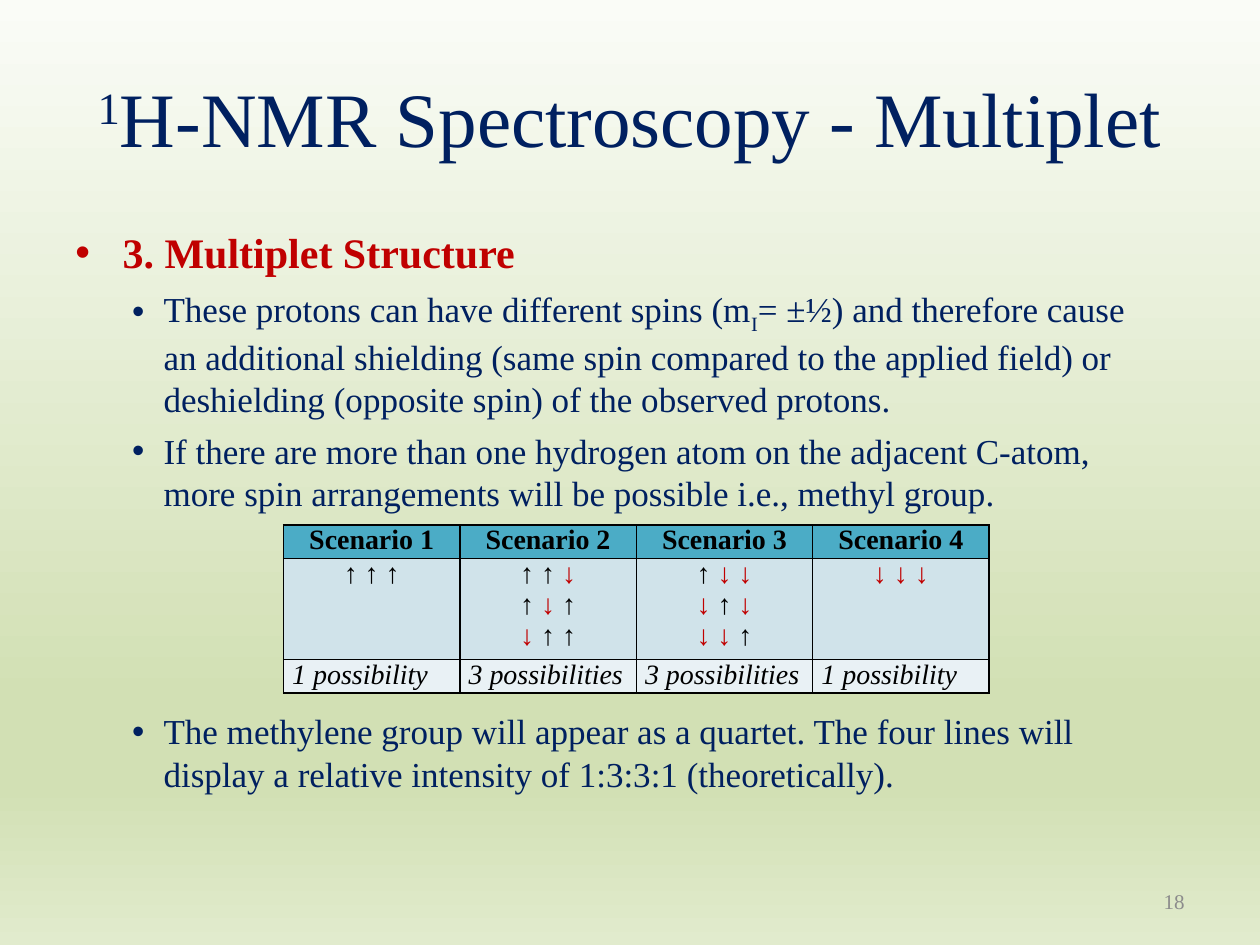
from lxml import etree
from pptx import Presentation
from pptx.dml.color import RGBColor
from pptx.enum.text import MSO_ANCHOR, PP_ALIGN
from pptx.oxml.ns import qn
from pptx.util import Pt

CENTER, RIGHT, LEFT = PP_ALIGN.CENTER, PP_ALIGN.RIGHT, PP_ALIGN.LEFT
TOP, MIDDLE = MSO_ANCHOR.TOP, MSO_ANCHOR.MIDDLE
FONT = "Times New Roman"
NAVY, RED, BLACK, GRAY = "002060", "C00000", "000000", "8C8C8C"
HEADER_FILL, SPIN_FILL, COUNT_FILL = "4BACC6", "D0E3EA", "E9F1F5"
BACKGROUND = [(0, "FAFCF7"), (74, "D2E0B4"), (83, "D2E0B4"), (100, "E1EBCD")]
TABLE_GAP = 112  # space kept free for the table above the last bullet

BULLETS = [
    (6, [("These protons can have different spins (m", 0), ("I", -25),
         ("= ±½) and therefore cause \nan additional shielding (same spin compared "
          "to the applied field) or deshielding (opposite spin) of the observed protons.", 0)]),
    (6, [("If there are more than one hydrogen atom on the adjacent C-atom, \n"
          "more spin arrangements will be possible i.e., methyl group.", 0)]),
    (TABLE_GAP, [("The methylene group will appear as a quartet. The four lines will \n"
                  "display a relative intensity of 1:3:3:1 (theoretically).", 0)]),
]
SCENARIOS = [
    ("Scenario 1", ["↑ ↑ ↑"], "1 possibility"),
    ("Scenario 2", ["↑ ↑ ↓", "↑ ↓ ↑", "↓ ↑ ↑"], "3 possibilities"),
    ("Scenario 3", ["↑ ↓ ↓", "↓ ↑ ↓", "↓ ↓ ↑"], "3 possibilities"),
    ("Scenario 4", ["↓ ↓ ↓"], "1 possibility"),
]


def color(value):
    return RGBColor.from_string(value)


def add_span(para, text, size, ink, bold=False, italic=False, baseline=0):
    for index, line in enumerate(text.split("\n")):
        if index:
            para.add_line_break()
        span = para.add_run()
        span.text = line
        font = span.font
        font.name, font.size, font.bold, font.italic = FONT, Pt(size), bold, italic
        font.color.rgb = color(ink)
        if baseline:
            font._element.set("baseline", str(baseline * 1000))


def add_frame(page, box, anchor):
    frame = page.shapes.add_textbox(*map(Pt, box)).text_frame
    frame.word_wrap = True
    frame.vertical_anchor = anchor
    return frame


def set_bullet(para, indent, hang, ink):
    props = para._p.get_or_add_pPr()
    props.set("marL", str(Pt(indent)))
    props.set("indent", str(-Pt(hang)))
    bullet_color = etree.SubElement(props, qn("a:buClr"))
    etree.SubElement(bullet_color, qn("a:srgbClr"), val=ink)
    etree.SubElement(props, qn("a:buFont"), typeface="Arial")
    etree.SubElement(props, qn("a:buChar"), char="•")


def paint_background(page):
    fill = page.background.fill
    fill.gradient()
    fill.gradient_angle = 270
    stops = page._element.find(".//" + qn("a:gsLst"))
    for stop in list(stops):
        stops.remove(stop)
    for position, value in BACKGROUND:
        stop = etree.SubElement(stops, qn("a:gs"), pos=str(position * 1000))
        etree.SubElement(stop, qn("a:srgbClr"), val=value)


def add_title(page, box):
    para = add_frame(page, box, MIDDLE).paragraphs[0]
    para.alignment = CENTER
    add_span(para, "1", 44, NAVY, baseline=30)
    add_span(para, "H-NMR Spectroscopy - Multiplet", 44, NAVY)


def add_body(page, box):
    frame = add_frame(page, box, TOP)
    heading = frame.paragraphs[0]
    heading.space_before = Pt(5)
    set_bullet(heading, 27, 27, RED)
    add_span(heading, "3. Multiplet Structure", 24, RED, bold=True)
    for gap, spans in BULLETS:
        para = frame.add_paragraph()
        para.space_before = Pt(gap)
        set_bullet(para, 50.4, 18, NAVY)
        for text, baseline in spans:
            add_span(para, text, 20, NAVY, baseline=baseline)


def style_cell(cell, fill):
    cell.margin_left = cell.margin_right = Pt(5)
    cell.margin_top = cell.margin_bottom = 0
    props = cell._tc.get_or_add_tcPr()
    for side in ("a:lnL", "a:lnR", "a:lnT", "a:lnB"):
        line = etree.SubElement(props, qn(side), w=str(Pt(1)))
        solid = etree.SubElement(line, qn("a:solidFill"))
        etree.SubElement(solid, qn("a:srgbClr"), val=BLACK)
    cell.fill.solid()
    cell.fill.fore_color.rgb = color(fill)


def add_spins(para, spins):
    arrows = spins.split()
    for index, arrow in enumerate(arrows):
        space = " " if index < len(arrows) - 1 else ""
        add_span(para, arrow + space, 16, RED if arrow == "↓" else BLACK, bold=True)


def add_scenarios(page, box):
    left, top, width, height = box
    table = page.shapes.add_table(3, len(SCENARIOS), *map(Pt, box)).table
    edge = 18.8
    for row, size in zip(table.rows, (edge, height - 2 * edge, edge)):
        row.height = Pt(size)
    for index, (name, arrangements, count) in enumerate(SCENARIOS):
        table.columns[index].width = Pt(width / len(SCENARIOS))
        header, spins, total = (table.cell(row, index) for row in range(3))
        for cell, fill in ((header, HEADER_FILL), (spins, SPIN_FILL), (total, COUNT_FILL)):
            style_cell(cell, fill)

        para = header.text_frame.paragraphs[0]
        para.alignment = CENTER
        add_span(para, name, 16, BLACK, bold=True)

        frame = spins.text_frame
        for number, arrangement in enumerate(arrangements):
            para = frame.add_paragraph() if number else frame.paragraphs[0]
            para.alignment = CENTER
            add_spins(para, arrangement)

        para = total.text_frame.paragraphs[0]
        para.alignment = LEFT
        add_span(para, count, 16, BLACK, italic=True)


def add_page_number(page, box):
    para = add_frame(page, box, MIDDLE).paragraphs[0]
    para.alignment = RIGHT
    add_span(para, "18", 12, GRAY)


def main():
    deck = Presentation()
    deck.slide_width, deck.slide_height = Pt(720), Pt(540)
    page = deck.slides.add_slide(deck.slide_layouts[6])
    paint_background(page)
    add_title(page, (36, 21.6, 648, 90))
    add_body(page, (36, 126, 648, 356.4))
    add_page_number(page, (516, 500.4, 168, 28.8))
    add_scenarios(page, (162, 300, 403.2, 90.8))
    deck.save("out.pptx")


if __name__ == "__main__":
    main()
